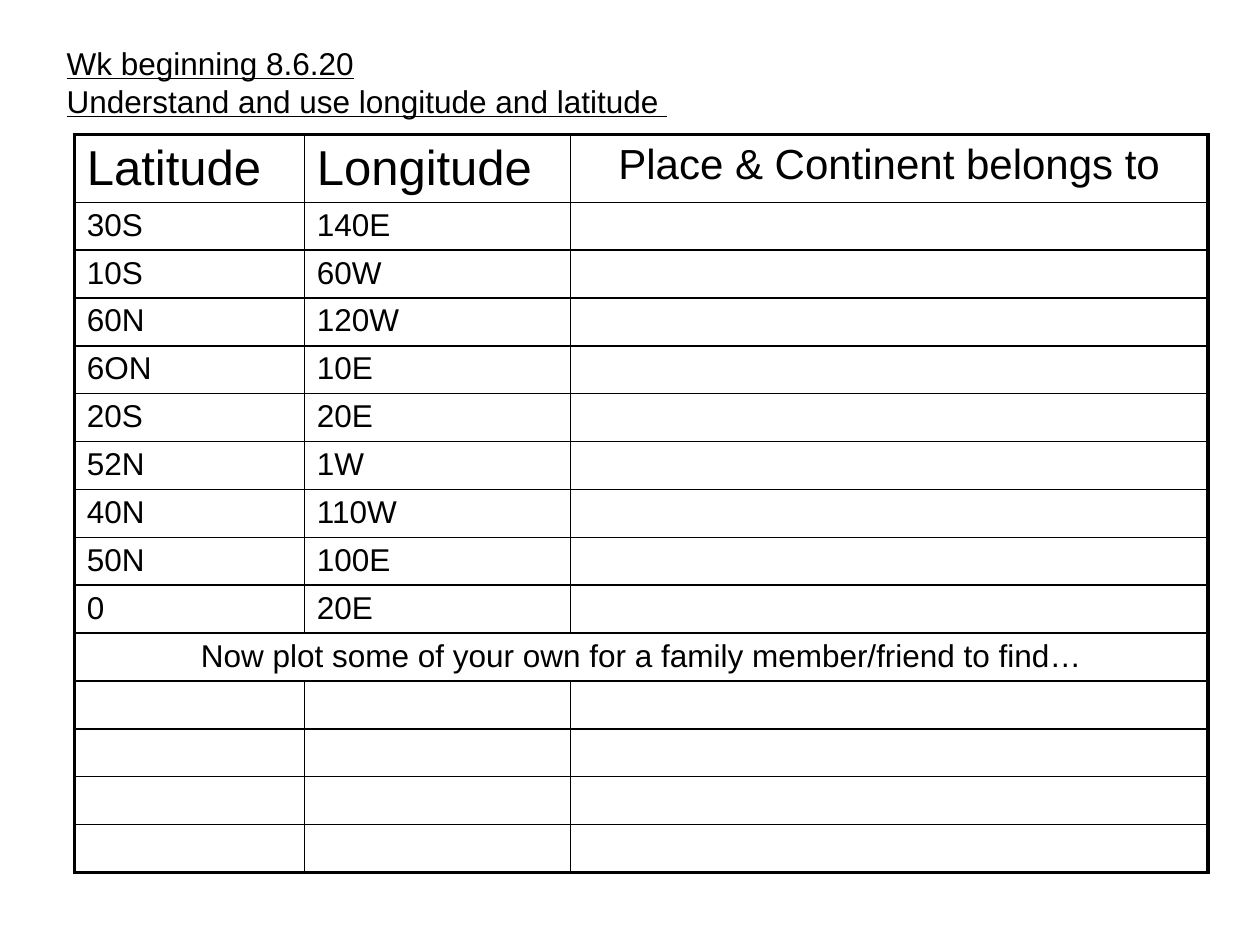
from pptx import Presentation
from pptx.dml.color import RGBColor
from pptx.enum.text import MSO_ANCHOR, PP_ALIGN
from pptx.oxml.ns import qn
from pptx.util import Pt
from lxml import etree

TOP = MSO_ANCHOR.TOP
LEFT, CENTER = PP_ALIGN.LEFT, PP_ALIGN.CENTER
COLORS = {"ink": "000000", "paper": "FFFFFF"}
FONT = "Arial"
THICK, THIN = 2.25, 1

HEADINGS = [("Latitude", 28, LEFT), ("Longitude", 28, LEFT),
            ("Place & Continent belongs to", 24, CENTER)]
COORDINATES = [("30S", "140E"), ("10S", "60W"), ("60N", "120W"),
               ("6ON", "10E"), ("20S", "20E"), ("52N", "1W"),
               ("40N", "110W"), ("50N", "100E"), ("0", "20E")]
PROMPT = "Now plot some of your own for a family member/friend to find…"
BLANK_ROWS = 4
COLUMN_WIDTHS = [131.4, 152, 364.5]
HEADER_HEIGHT, ROW_HEIGHT = 38.6, 27.37


def write(paragraph, text, size=18, align=LEFT, underline=False, spacing=None):
    paragraph.alignment = align
    if spacing:
        paragraph.line_spacing = Pt(spacing)
    run = paragraph.add_run()
    run.text = text
    run.font.name = FONT
    run.font.size = Pt(size)
    run.font.underline = underline
    run.font.color.rgb = RGBColor.from_string(COLORS["ink"])


def set_borders(cell, **widths):
    properties = cell._tc.get_or_add_tcPr()
    # Border lines come before the cell fill, in the order L, R, T, B
    for index, (side, width) in enumerate(widths.items()):
        line = etree.Element(qn(f"a:ln{side}"), w=str(Pt(width)))
        fill = etree.SubElement(line, qn("a:solidFill"))
        etree.SubElement(fill, qn("a:srgbClr"), val=COLORS["ink"])
        properties.insert(index, line)


class Worksheet:
    def __init__(self, presentation):
        self.slide = presentation.slides.add_slide(presentation.slide_layouts[6])

    def heading(self, lines, left, top, width, height):
        box = self.slide.shapes.add_textbox(Pt(left), Pt(top), Pt(width), Pt(height))
        frame = box.text_frame
        frame.word_wrap = True
        frame.vertical_anchor = TOP
        frame.margin_top = Pt(3.8)
        for index, line in enumerate(lines):
            paragraph = frame.add_paragraph() if index else frame.paragraphs[0]
            write(paragraph, line, underline=True, spacing=21.7)

    def grid(self, left, top, widths, heights):
        table = self.slide.shapes.add_table(
            len(heights), len(widths), Pt(left), Pt(top),
            Pt(sum(widths)), Pt(sum(heights))).table
        table.first_row = table.horz_banding = False
        for column, width in zip(table.columns, widths):
            column.width = Pt(width)
        for row, height in zip(table.rows, heights):
            row.height = Pt(height)
        return table

    def frame_cells(self, table, full_width_row):
        last_row, last_column = len(table.rows) - 1, len(table.columns) - 1
        for r in range(last_row + 1):
            for c in range(last_column + 1):
                cell = table.cell(r, c)
                cell.margin_top = Pt(3.1 if r else 3.6)
                cell.margin_bottom = Pt(1)
                cell.fill.solid()
                cell.fill.fore_color.rgb = RGBColor.from_string(COLORS["paper"])
                at_right = c == last_column or r == full_width_row
                set_borders(cell,
                            L=THIN if c else THICK,
                            R=THICK if at_right else THIN,
                            T=THIN if r else THICK,
                            B=THICK if r == last_row else THIN)


def main():
    presentation = Presentation()
    presentation.slide_width, presentation.slide_height = Pt(720), Pt(540)
    sheet = Worksheet(presentation)

    # Title
    sheet.heading(["Wk beginning 8.6.20", "Understand and use longitude and latitude "],
                  31, 21, 425.5, 62.6)

    # Coordinate table
    prompt_row = len(COORDINATES) + 1
    heights = [HEADER_HEIGHT] + [ROW_HEIGHT] * (prompt_row + BLANK_ROWS)
    table = sheet.grid(42.5, 77, COLUMN_WIDTHS, heights)
    for c, (text, size, align) in enumerate(HEADINGS):
        write(table.cell(0, c).text_frame.paragraphs[0], text, size=size, align=align)
    for r, pair in enumerate(COORDINATES, start=1):
        for c, text in enumerate(pair):
            write(table.cell(r, c).text_frame.paragraphs[0], text)

    # Full-width prompt
    prompt = table.cell(prompt_row, 0)
    prompt.merge(table.cell(prompt_row, len(COLUMN_WIDTHS) - 1))
    write(prompt.text_frame.paragraphs[0], PROMPT, align=CENTER)
    sheet.frame_cells(table, prompt_row)

    presentation.save("out.pptx")


if __name__ == "__main__":
    main()
